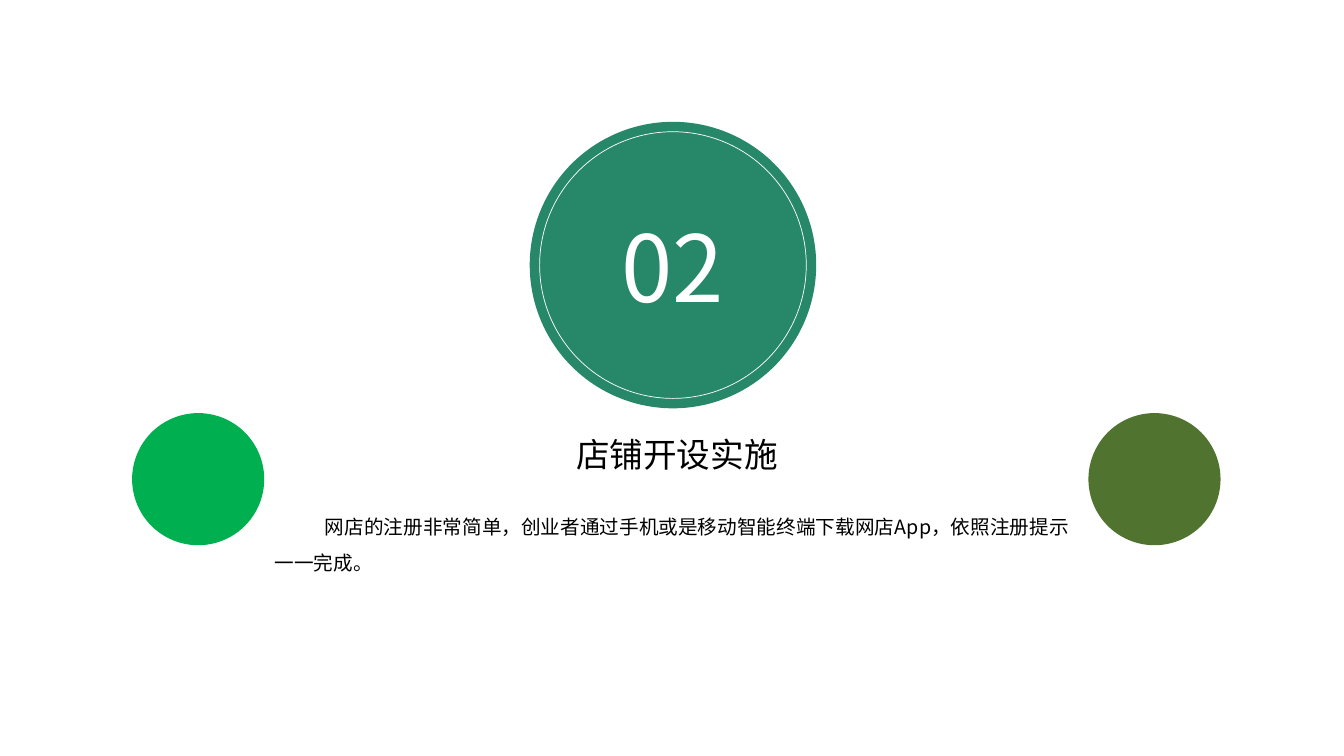
from lxml import etree
from pptx import Presentation
from pptx.dml.color import RGBColor
from pptx.enum import shapes, text
from pptx.oxml import ns
from pptx.util import Cm, Pt

FONT = "Noto Sans CJK SC"
COLORS = {"teal": "268868", "green": "00B050", "olive": "50742F",
          "white": "FFFFFF", "black": "000000"}


def color(name):
    return RGBColor.from_string(COLORS[name])


def add_circle(s, x, y, size, fill=None, line=None):
    sp = s.shapes.add_shape(shapes.MSO_SHAPE.OVAL, Cm(x), Cm(y), Cm(size), Cm(size))
    sp.shadow.inherit = False
    if fill:
        sp.fill.solid()
        sp.fill.fore_color.rgb = color(fill)
    else:
        sp.fill.background()
    if line:
        sp.line.color.rgb = color(line)
        sp.line.width = Pt(0.5)
    else:
        sp.line.fill.background()


def add_text(s, x, y, w, h, content, size, ink="black", align=text.PP_ALIGN.CENTER):
    tf = s.shapes.add_textbox(Cm(x), Cm(y), Cm(w), Cm(h)).text_frame
    tf.word_wrap = True
    tf.vertical_anchor = text.MSO_ANCHOR.MIDDLE
    p = tf.paragraphs[0]
    p.alignment = align
    r = p.add_run()
    r.text = content
    r.font.name = FONT
    r.font.size = Pt(size)
    r.font.color.rgb = color(ink)
    etree.SubElement(r.font._element, ns.qn("a:ea"), typeface=FONT)
    return p


def add_badge(s, x, y, size, number):
    """Section number in a disc with a thin inner ring."""
    inset, text_h = 0.25, 3.15
    add_circle(s, x, y, size, fill="teal")
    add_circle(s, x + inset, y + inset, size - 2 * inset, line="white")
    add_text(s, x + 0.56, y + (size - text_h) / 2, size - 1.12, text_h,
             number, 66, "white")


def add_side_circles(s, x, y, w, size):
    """One disc at each end of the band."""
    add_circle(s, x, y, size, fill="green")
    add_circle(s, x + w - size, y, size, fill="olive")


def add_caption(s, x, y, w, title, body):
    """Section title with the introduction below."""
    title_w = 12.07
    add_text(s, x + (w - title_w) / 2, y, title_w, 1.27, title, 24)
    p = add_text(s, x, y + 1.75, w, 2.06, body, 14, align=text.PP_ALIGN.LEFT)
    p.line_spacing = 1.5
    p._p.get_or_add_pPr().set("indent", str(Cm(1.27)))


def main():
    prs = Presentation()
    prs.slide_width, prs.slide_height = Cm(33.87), Cm(19.05)
    s = prs.slides.add_slide(prs.slide_layouts[6])
    add_badge(s, 13.35, 3.07, 7.22, "02")
    add_side_circles(s, 3.33, 10.41, 27.43, 3.33)
    add_caption(s, 6.67, 10.8, 20.78, "店铺开设实施",
                "网店的注册非常简单，创业者通过手机或是移动智能终端下载网店App，"
                "依照注册提示一一完成。")
    prs.save("out.pptx")


if __name__ == "__main__":
    main()
